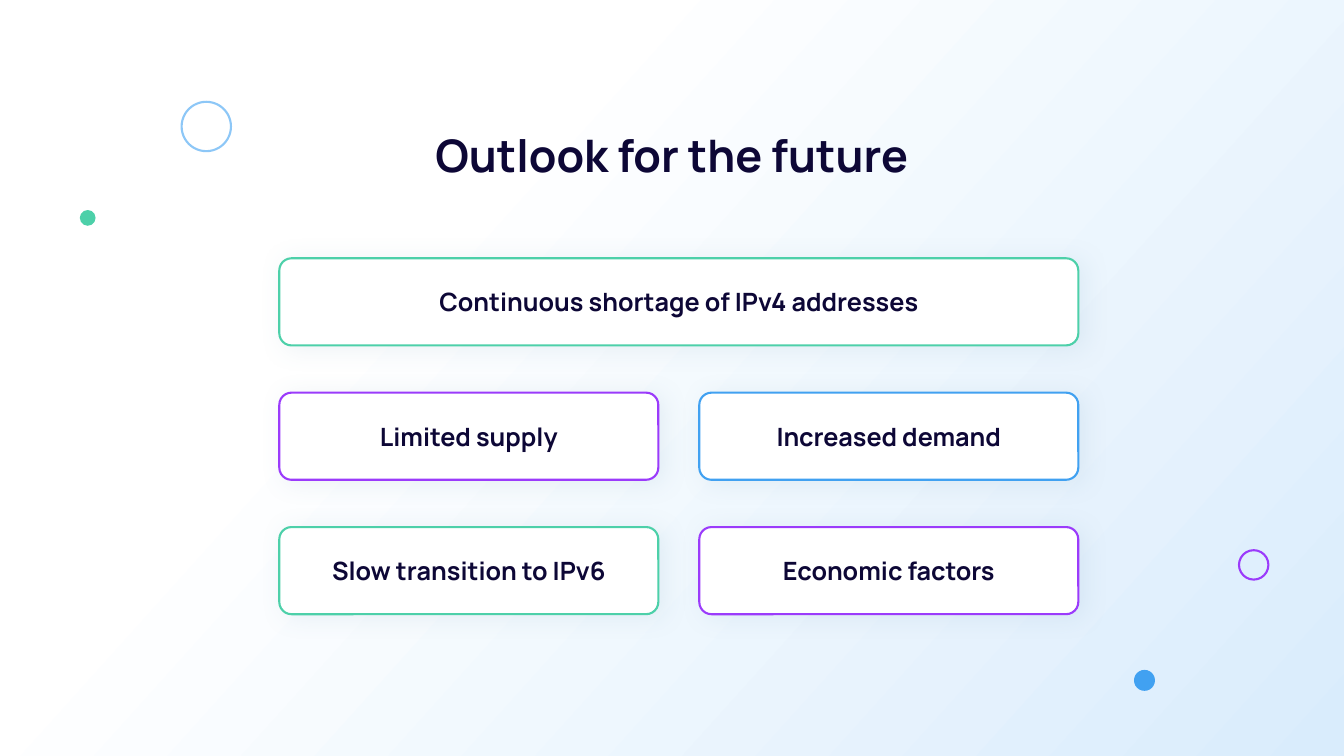
from copy import deepcopy
from dataclasses import dataclass
from typing import Optional

from lxml import etree
from pptx import Presentation
from pptx import util as u
from pptx.dml.color import RGBColor
from pptx.enum import shapes, text
from pptx.oxml.ns import qn

PX = 9525  # EMU in one px, 96 px to the inch
PAGE_WIDTH, PAGE_HEIGHT = 1280, 720

WHITE = RGBColor(0xFF, 0xFF, 0xFF)
PALE_BLUE = RGBColor(0xD9, 0xEC, 0xFC)
NAVY = RGBColor(0x0D, 0x07, 0x36)
GREEN = RGBColor(0x4D, 0xD0, 0xA9)
PURPLE = RGBColor(0x9B, 0x3B, 0xFB)
BLUE = RGBColor(0x41, 0xA1, 0xF1)
SKY = RGBColor(0x8D, 0xC7, 0xF7)
SHADOW = RGBColor(0x78, 0x9F, 0xBA)

FONT = "Manrope"
GRID_LEFT, GRID_TOP = 266, 246
COLUMN_PITCH, ROW_PITCH = 400, 128
CARD_WIDTH, CARD_HEIGHT = 361, 83


@dataclass(frozen=True)
class Card:
    label: str
    row: int
    column: int
    color: RGBColor
    columns: int = 1


@dataclass(frozen=True)
class Circle:
    left: int
    top: int
    size: int
    fill: Optional[RGBColor] = None
    line: Optional[RGBColor] = None


CARDS = [
    Card("Continuous shortage of IPv4 addresses", 0, 0, GREEN, columns=2),
    Card("Limited supply", 1, 0, PURPLE),
    Card("Increased demand", 1, 1, BLUE),
    Card("Slow transition to IPv6", 2, 0, GREEN),
    Card("Economic factors", 2, 1, PURPLE),
]
CIRCLES = [
    Circle(1180, 524, 28, line=PURPLE),
    Circle(76, 200, 15, fill=GREEN),
    Circle(173, 97, 47, line=SKY),
    Circle(1080, 638, 20, fill=BLUE),
]


def px(*lengths: int) -> list[u.Emu]:
    return [u.Emu(length * PX) for length in lengths]


def paint_background(page) -> None:
    fill = page.background.fill
    fill.gradient()
    fill.gradient_angle = 360 - 42
    stop_list = page.element.find(".//" + qn("a:gsLst"))
    stop_list.insert(0, deepcopy(stop_list[0]))
    stops = [(0, WHITE), (0.31, WHITE), (1, PALE_BLUE)]
    for stop, (position, color) in zip(fill.gradient_stops, stops):
        stop.position = position
        stop.color.rgb = color


def style_text(paragraph, size: int) -> None:
    paragraph.alignment = text.PP_ALIGN.CENTER
    font = paragraph.font
    font.name, font.size, font.bold = FONT, u.Pt(size), True
    font.color.rgb = NAVY


def add_title(page, wording: str) -> None:
    title = page.shapes.title
    title.left, title.top, title.width, title.height = px(0, 109, PAGE_WIDTH, 67)
    frame = title.text_frame
    frame.text = wording
    frame.word_wrap = True
    frame.auto_size = text.MSO_AUTO_SIZE.SHAPE_TO_FIT_TEXT
    frame.vertical_anchor = text.MSO_ANCHOR.TOP
    paragraph = frame.paragraphs[0]
    paragraph.line_spacing = u.Pt(44.4)
    style_text(paragraph, 32)


def add_soft_shadow(shape) -> None:
    shape.shadow.inherit = False
    effects = shape.element.spPr.find(qn("a:effectLst"))
    shadow = etree.SubElement(
        effects, qn("a:outerShdw"), blurRad=str(u.Pt(17.7)), dist=str(u.Pt(4)),
        dir=str(26 * 60000), algn="tl", rotWithShape="0")
    color = etree.SubElement(shadow, qn("a:srgbClr"), val=str(SHADOW))
    etree.SubElement(color, qn("a:alpha"), val="13000")


def add_card(page, card: Card) -> None:
    left = GRID_LEFT + card.column * COLUMN_PITCH
    top = GRID_TOP + card.row * ROW_PITCH
    width = CARD_WIDTH + (card.columns - 1) * COLUMN_PITCH
    box = page.shapes.add_shape(
        shapes.MSO_SHAPE.ROUNDED_RECTANGLE, *px(left, top, width, CARD_HEIGHT))
    box.adjustments[0] = 0.14
    box.fill.solid()
    box.fill.fore_color.rgb = WHITE
    box.line.color.rgb = card.color
    box.line.width = u.Pt(1.5)
    add_soft_shadow(box)
    frame = box.text_frame
    frame.text = card.label
    frame.word_wrap = True
    frame.vertical_anchor = text.MSO_ANCHOR.MIDDLE
    style_text(frame.paragraphs[0], 18)


def add_circle(page, circle: Circle) -> None:
    dot = page.shapes.add_shape(
        shapes.MSO_SHAPE.OVAL,
        *px(circle.left, circle.top, circle.size, circle.size))
    dot.shadow.inherit = False
    if circle.fill is None:
        dot.fill.background()
    else:
        dot.fill.solid()
        dot.fill.fore_color.rgb = circle.fill
    if circle.line is None:
        dot.line.fill.background()
    else:
        dot.line.color.rgb = circle.line
        dot.line.width = u.Pt(1.5)


def main() -> None:
    deck = Presentation()
    deck.slide_width, deck.slide_height = px(PAGE_WIDTH, PAGE_HEIGHT)
    page = deck.slides.add_slide(deck.slide_layouts.get_by_name("Title Only"))
    paint_background(page)
    add_title(page, "Outlook for the future")
    for card in CARDS:
        add_card(page, card)
    for circle in CIRCLES:
        add_circle(page, circle)
    deck.save("out.pptx")


if __name__ == "__main__":
    main()
